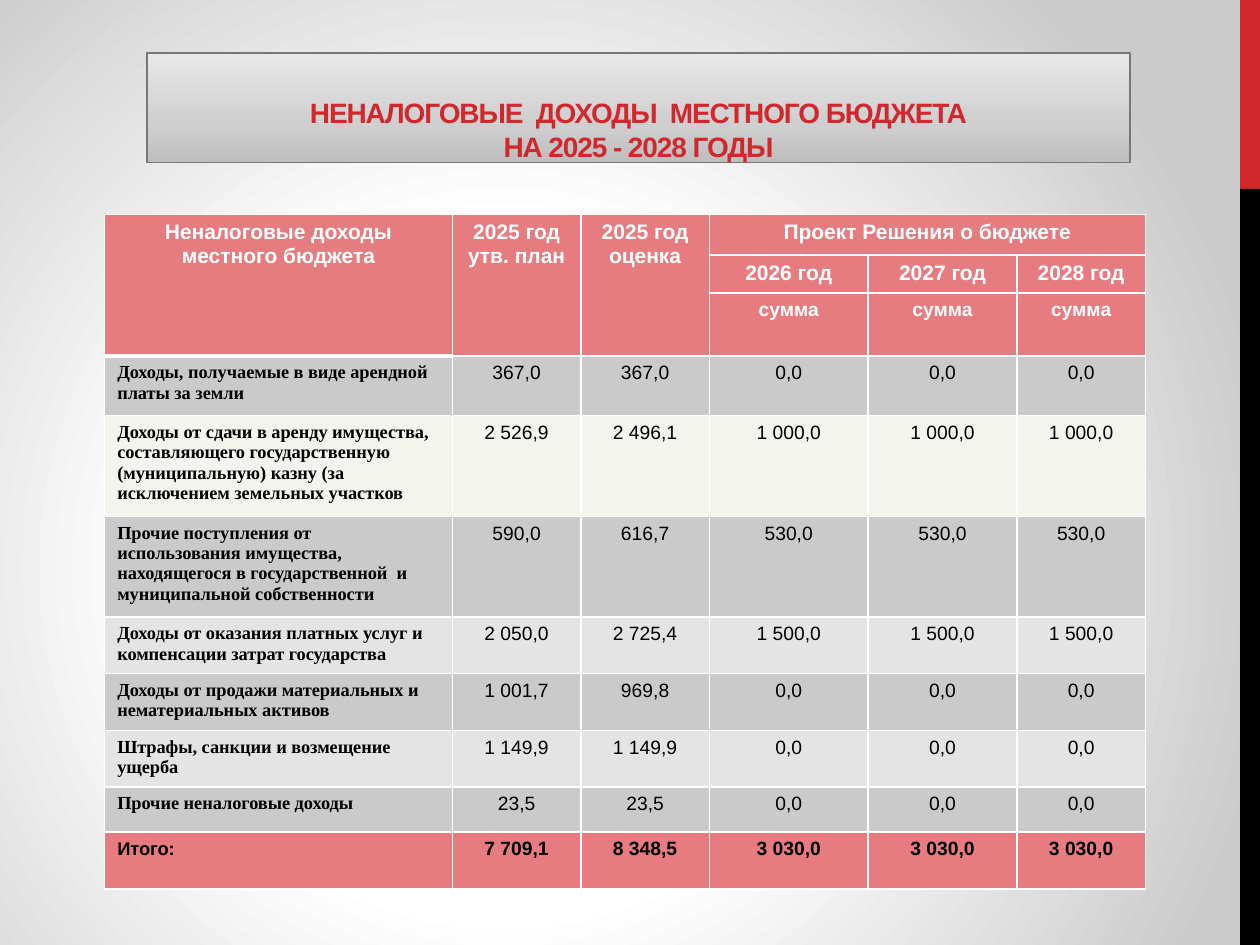
from lxml.etree import SubElement
from pptx import Presentation
from pptx.dml.color import RGBColor
from pptx.enum.shapes import MSO_SHAPE
from pptx.enum.text import MSO_ANCHOR, PP_ALIGN
from pptx.oxml import parse_xml
from pptx.oxml.ns import nsdecls, qn
from pptx.util import Cm, Pt

RED, ROSE, WHITE, BLACK = "D1282E", "E67C7F", "FFFFFF", "000000"
DARK, LIGHT, CREAM = "CACACA", "E4E4E4", "F4F4EF"

TITLE = "НЕНАЛОГОВЫЕ  ДОХОДЫ  МЕСТНОГО БЮДЖЕТА\vНА 2025 - 2028 ГОДЫ"
HEAD = [
    ["Неналоговые доходы местного бюджета", "2025 год утв. план", "2025 год оценка",
     "Проект Решения о бюджете", "", ""],
    ["", "", "", "2026 год", "2027 год", "2028 год"],
    ["", "", ""] + ["сумма"] * 3,
]
# Name, 2025 plan, 2025 estimate, yearly sum for 2026-2028, fill
ITEMS = [
    ("Доходы, получаемые в виде арендной платы за земли", "367,0", "367,0", "0,0", DARK),
    ("Доходы от сдачи в аренду имущества, составляющего государственную "
     "(муниципальную) казну (за исключением земельных участков",
     "2 526,9", "2 496,1", "1 000,0", CREAM),
    ("Прочие поступления от использования имущества, находящегося в "
     "государственной  и муниципальной собственности", "590,0", "616,7", "530,0", DARK),
    ("Доходы от оказания платных услуг и компенсации затрат государства",
     "2 050,0", "2 725,4", "1 500,0", LIGHT),
    ("Доходы от продажи материальных и нематериальных активов",
     "1 001,7", "969,8", "0,0", DARK),
    ("Штрафы, санкции и возмещение ущерба", "1 149,9", "1 149,9", "0,0", LIGHT),
    ("Прочие неналоговые доходы", "23,5", "23,5", "0,0", DARK),
    ("Итого:", "7 709,1", "8 348,5", "3 030,0", ROSE),
]
WIDTHS = [7.01, 2.59, 2.59, 3.2, 3, 2.59]
HEIGHTS = [0.82, 0.77, 1.27, 1.2, 2.03, 2.03, 1.14, 1.15, 1.14, 0.91, 1.15]
MERGES = [(0, 0, 2, 0), (0, 1, 2, 1), (0, 2, 2, 2), (0, 3, 0, 5)]


def color(code):
    return RGBColor.from_string(code)


def blend(fill, root, stops, shade):
    """Fill with a gradient of (percent, colour) stops and a shade element."""
    fill.gradient()
    grad = next(root.iter(qn("a:gradFill")))
    grad.clear()
    group = SubElement(grad, qn("a:gsLst"))
    for pos, code in stops:
        stop = SubElement(group, qn("a:gs"), pos=str(pos * 1000))
        SubElement(stop, qn("a:srgbClr"), val=code)
    grad.append(parse_xml(shade))


def box(slide, *place):
    shape = slide.shapes.add_shape(MSO_SHAPE.RECTANGLE, *map(Cm, place))
    shape.shadow.inherit = False
    return shape


def style(para, face, size, code, bold, align):
    para.alignment = align
    font = para.font
    font.name, font.size, font.bold = face, Pt(size), bold
    font.color.rgb = color(code)
    return font


def border(cell, bottom):
    """Draw white cell borders, 1 pt but for the bottom one."""
    props = cell._tc.get_or_add_tcPr()
    for spot, side in enumerate("LRTB"):
        width = Pt(bottom if side == "B" else 1)
        props.insert(spot, parse_xml(
            f'<a:ln{side} {nsdecls("a")} w="{width}"><a:solidFill>'
            f'<a:srgbClr val="{WHITE}"/></a:solidFill></a:ln{side}>'))


def look(row, col):
    """Return face, size, colour, bold and alignment of a table cell."""
    if row < len(HEAD):
        return "Arial", 11 if row == 2 else 12, WHITE, True, PP_ALIGN.CENTER
    last = row == len(HEIGHTS) - 1
    if col == 0:
        return "Arial" if last else "Times New Roman", 10.5, BLACK, True, PP_ALIGN.LEFT
    return "Arial", 11, BLACK, last, PP_ALIGN.CENTER


def add_title(slide):
    shape = box(slide, 2.97, 1.07, 19.81, 2.21)
    blend(shape.fill, shape.element, [(0, "BEBEBE"), (35, "CFCFCF"), (100, "E7E7E7")],
          f'<a:lin {nsdecls("a")} ang="16200000" scaled="1"/>')
    shape.line.color.rgb = color("777777")
    shape.line.width = Pt(1)
    frame = shape.text_frame
    frame.word_wrap = True
    frame.vertical_anchor = MSO_ANCHOR.BOTTOM
    frame.margin_left = frame.margin_right = Cm(0.13)
    frame.margin_top = frame.margin_bottom = 0
    para = frame.paragraphs[0]
    para.text = TITLE
    font = style(para, "Arial", 16, RED, True, PP_ALIGN.CENTER)
    font._element.set("spc", "-60")


def add_budget(slide):
    rows = [(texts, ROSE) for texts in HEAD]
    rows += [([name, plan, guess] + [total] * 3, fill)
             for name, plan, guess, total, fill in ITEMS]
    table = slide.shapes.add_table(
        len(rows), len(WIDTHS), Cm(2.11), Cm(4.32),
        Cm(sum(WIDTHS)), Cm(sum(HEIGHTS))).table
    table.first_row = table.horz_banding = False
    for col, width in zip(table.columns, WIDTHS):
        col.width = Cm(width)
    for r, (texts, fill) in enumerate(rows):
        table.rows[r].height = Cm(HEIGHTS[r])
        for c, text in enumerate(texts):
            cell = table.cell(r, c)
            cell.text = text
            style(cell.text_frame.paragraphs[0], *look(r, c))
            cell.fill.solid()
            cell.fill.fore_color.rgb = color(fill)
            border(cell, 3 if r == c == 0 else 1)
    for top, left, bottom, right in MERGES:
        table.cell(top, left).merge(table.cell(bottom, right))


def main():
    deck = Presentation()
    deck.slide_width, deck.slide_height = Cm(25.4), Cm(19.05)
    slide = deck.slides.add_slide(deck.slide_layouts[6])
    blend(slide.background.fill, slide.element,
          [(0, WHITE), (44, WHITE), (100, "CBCBCB")],
          f'<a:path {nsdecls("a")} path="circle"><a:fillToRect l="40000" '
          't="60000" r="60000" b="40000"/></a:path>')
    for top, height, code in [(0, 3.81, RED), (3.81, 15.24, BLACK)]:
        stripe = box(slide, 25, top, 0.4, height)
        stripe.fill.solid()
        stripe.fill.fore_color.rgb = color(code)
        stripe.line.fill.background()
    add_title(slide)
    add_budget(slide)
    deck.save("out.pptx")


if __name__ == "__main__":
    main()
